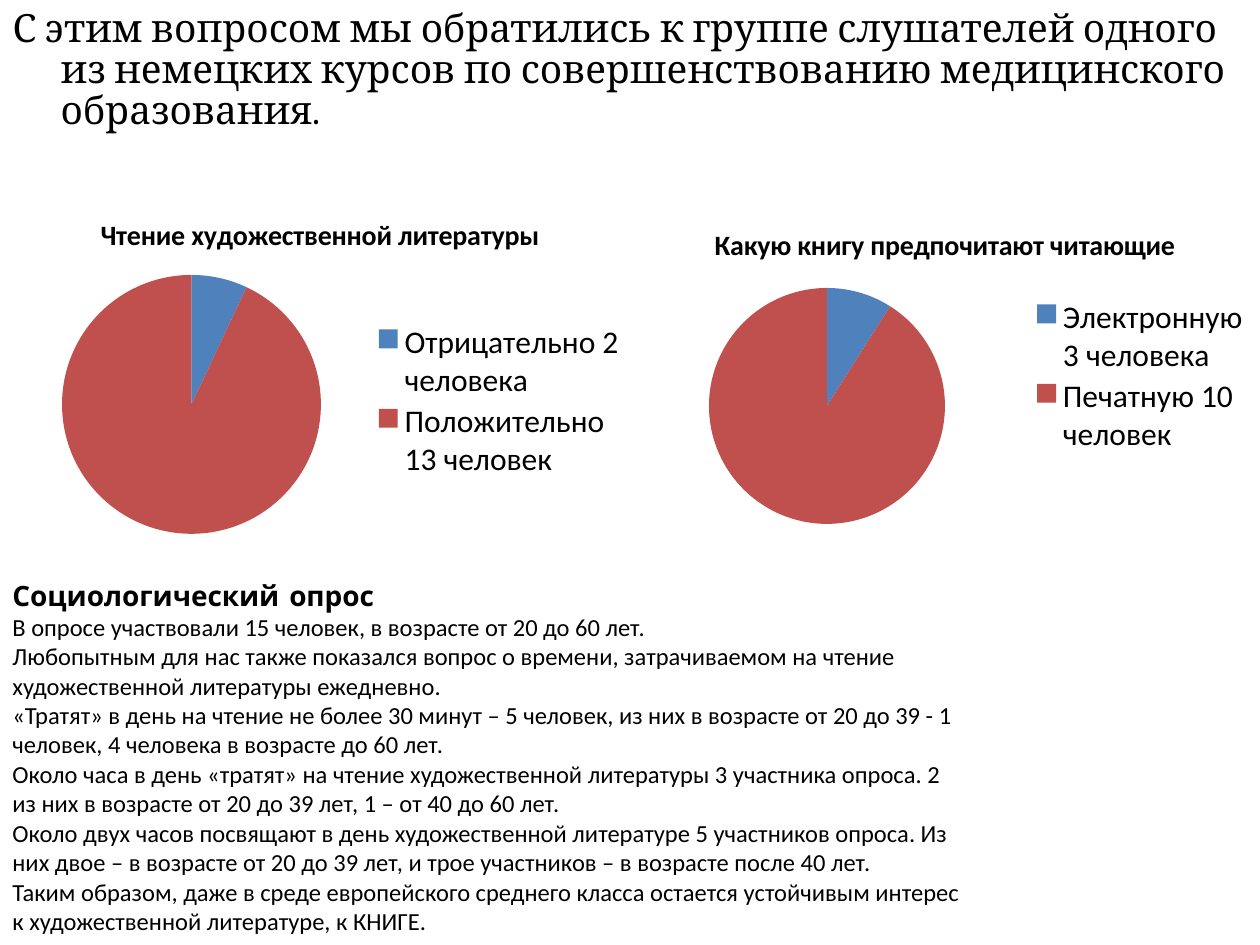
from dataclasses import dataclass
from typing import NamedTuple

from lxml import etree
from pptx import Presentation
from pptx import util as u
from pptx.chart.data import CategoryChartData
from pptx.dml.color import RGBColor
from pptx.enum import chart as ch, text
from pptx.oxml.ns import qn

PX_PER_INCH = 126
COLORS = {"text": "000000", "first": "4F81BD", "second": "C0504D"}


class Box(NamedTuple):
    x: int
    y: int
    w: int
    h: int


@dataclass
class Pie:
    title: str
    series: str
    cats: list[str]
    vals: list[int]
    box: Box
    plot: Box
    legend: Box


PIES = [
    Pie("Чтение художественной литературы", "Series 1",
        ["Отрицательно 2 человека", "Положительно 13 человек"], [7, 93],
        Box(0, 197, 640, 354), Box(62, 275, 259, 259), Box(392, 320, 242, 162)),
    Pie("Какую книгу предпочитают читающие", "Какую книгу предпочитают читающие",
        ["Электронную 3 человека", "Печатную 10 человек"], [9, 91],
        Box(630, 207, 630, 335), Box(709, 288, 236, 236), Box(1027, 295, 226, 162)),
]
HEADING = ("С этим вопросом мы обратились к группе слушателей одного из немецких "
           "курсов по совершенствованию медицинского образования.")
SURVEY_TITLE = "Социологический опрос"
SURVEY = [
    "В опросе участвовали 15 человек, в возрасте от 20 до 60 лет.",
    "Любопытным для нас также показался вопрос о времени, затрачиваемом на чтение "
    "художественной литературы ежедневно.",
    "«Тратят» в день на чтение не более 30 минут – 5 человек, из них в возрасте "
    "от 20 до 39 - 1 человек, 4 человека в возрасте до 60 лет.",
    "Около часа в день «тратят» на чтение художественной литературы 3 участника опроса. "
    "2 из них в возрасте от 20 до 39 лет, 1 – от 40 до 60 лет.",
    "Около двух часов посвящают в день художественной литературе 5 участников опроса. "
    "Из них двое – в возрасте от 20 до 39 лет, и трое участников – в возрасте после 40 лет.",
    "Таким образом, даже в среде европейского среднего класса остается устойчивым "
    "интерес к художественной литературе, к КНИГЕ.",
]


def px(n: int) -> u.Emu:
    return u.Emu(round(n * 914400 / PX_PER_INCH))


def rgb(name: str) -> RGBColor:
    return RGBColor.from_string(COLORS[name])


def set_font(font, name: str, size: float, bold: bool = False) -> None:
    for key, value in {"name": name, "size": u.Pt(size), "bold": bold}.items():
        setattr(font, key, value)
    font.color.rgb = rgb("text")


def add_heading(s, box: Box) -> None:
    sp = s.shapes.title
    sp.left, sp.top, sp.width, sp.height = map(px, box)
    tf = sp.text_frame
    tf.text = HEADING
    frame = {"word_wrap": True, "vertical_anchor": text.MSO_ANCHOR.TOP,
             "auto_size": text.MSO_AUTO_SIZE.NONE, "margin_top": px(10)}
    for key, value in frame.items():
        setattr(tf, key, value)
    p = tf.paragraphs[0]
    p.alignment = text.PP_ALIGN.LEFT
    p.line_spacing = 0.88
    p.space_before = u.Pt(0)
    indent = px(48)
    pPr = p._p.get_or_add_pPr()
    pPr.set("marL", str(indent))
    pPr.set("indent", str(-indent))
    set_font(p.runs[0].font, "Cambria", 22.2)


def add_survey(s, box: Box) -> None:
    tf = s.shapes.add_textbox(*map(px, box)).text_frame
    tf.word_wrap = True
    tf.auto_size = text.MSO_AUTO_SIZE.SHAPE_TO_FIT_TEXT
    p = tf.paragraphs[0]
    p.text = SURVEY_TITLE
    set_font(p.runs[0].font, "Comic Neue", 16, True)
    for line in SURVEY:
        r = tf.add_paragraph().add_run()
        r.text = line
        set_font(r.font, "Calibri", 14)


def set_layout(parent, index: int, part: Box, box: Box, inner: bool = False) -> None:
    """Place a chart part at fixed fractions of its chart frame."""
    for old in parent.findall(qn("c:layout")):
        parent.remove(old)
    layout = etree.Element(qn("c:layout"))
    manual = etree.SubElement(layout, qn("c:manualLayout"))
    values = {"layoutTarget": "inner"} if inner else {}
    values |= {"xMode": "edge", "yMode": "edge",
               "x": (part.x - box.x) / box.w, "y": (part.y - box.y) / box.h,
               "w": part.w / box.w, "h": part.h / box.h}
    for tag, value in values.items():
        etree.SubElement(manual, qn(f"c:{tag}")).set("val", str(value))
    parent.insert(index, layout)


def add_pie(s, pie: Pie) -> None:
    data = CategoryChartData()
    data.categories = pie.cats
    data.add_series(pie.series, pie.vals)
    chart = s.shapes.add_chart(ch.XL_CHART_TYPE.PIE, *map(px, pie.box), data).chart
    set_font(chart.font, "Calibri", 18)

    chart.has_title = True
    tf = chart.chart_title.text_frame
    tf.text = pie.title
    set_font(tf.paragraphs[0].runs[0].font, "Calibri", 16, True)
    chart.chart_title.include_in_layout = False

    chart.has_legend = True
    chart.legend.position = ch.XL_LEGEND_POSITION.RIGHT
    chart.legend.include_in_layout = False
    set_font(chart.legend.font, "Calibri", 18)

    plot = chart.plots[0]
    plot.vary_by_categories = True
    for i, color in enumerate(("first", "second")):
        fill = plot.series[0].points[i].format.fill
        fill.solid()
        fill.fore_color.rgb = rgb(color)

    plot_area = chart._chartSpace.chart.plotArea
    set_layout(plot_area, 0, pie.plot, pie.box, inner=True)
    set_layout(chart.legend._element, 1, pie.legend, pie.box)


def main() -> None:
    prs = Presentation()
    prs.slide_width, prs.slide_height = px(1260), px(945)
    s = prs.slides.add_slide(prs.slide_layouts[5])
    add_heading(s, Box(0, 0, 1260, 137))
    add_survey(s, Box(0, 572, 974, 373))
    for pie in PIES:
        add_pie(s, pie)
    prs.save("out.pptx")


if __name__ == "__main__":
    main()
